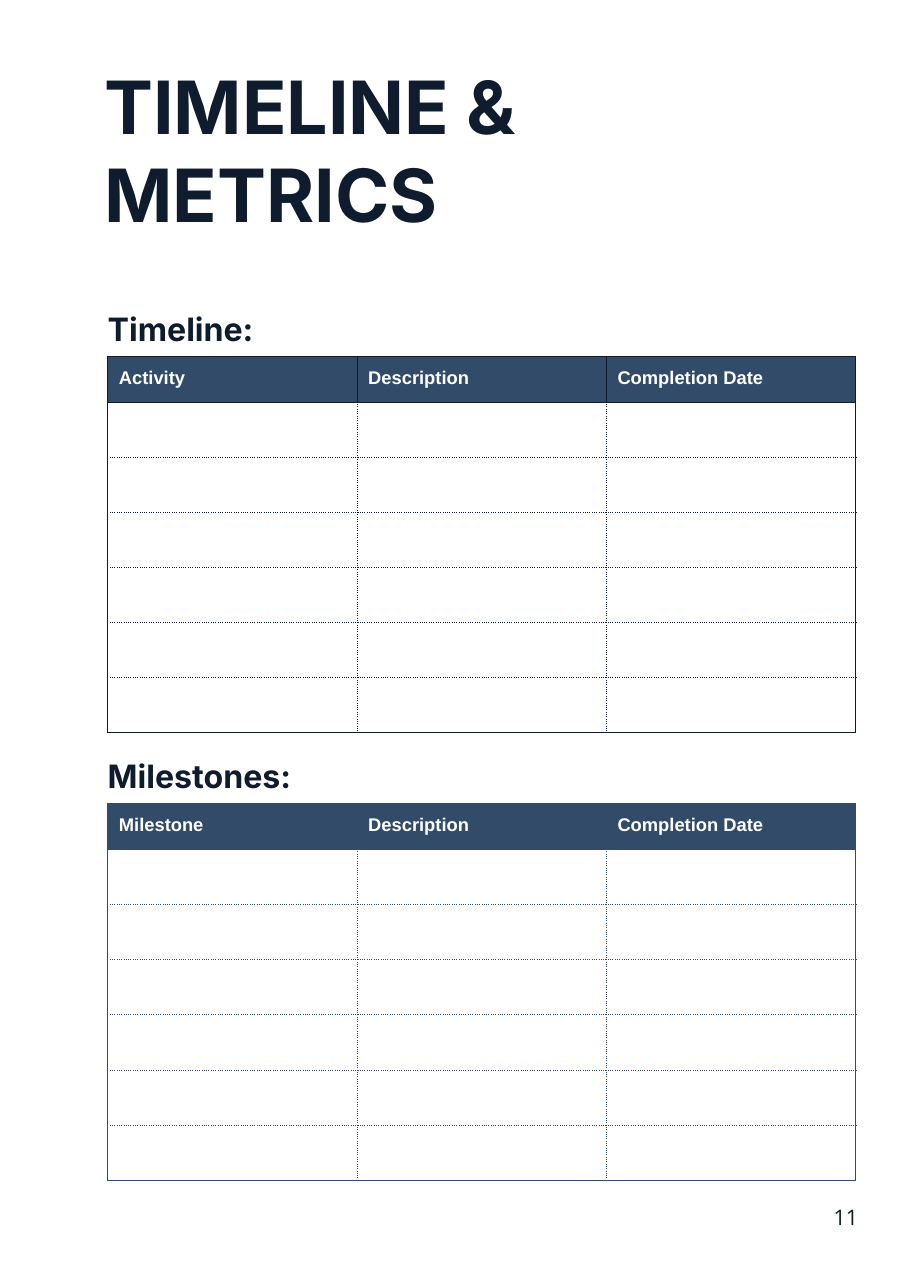
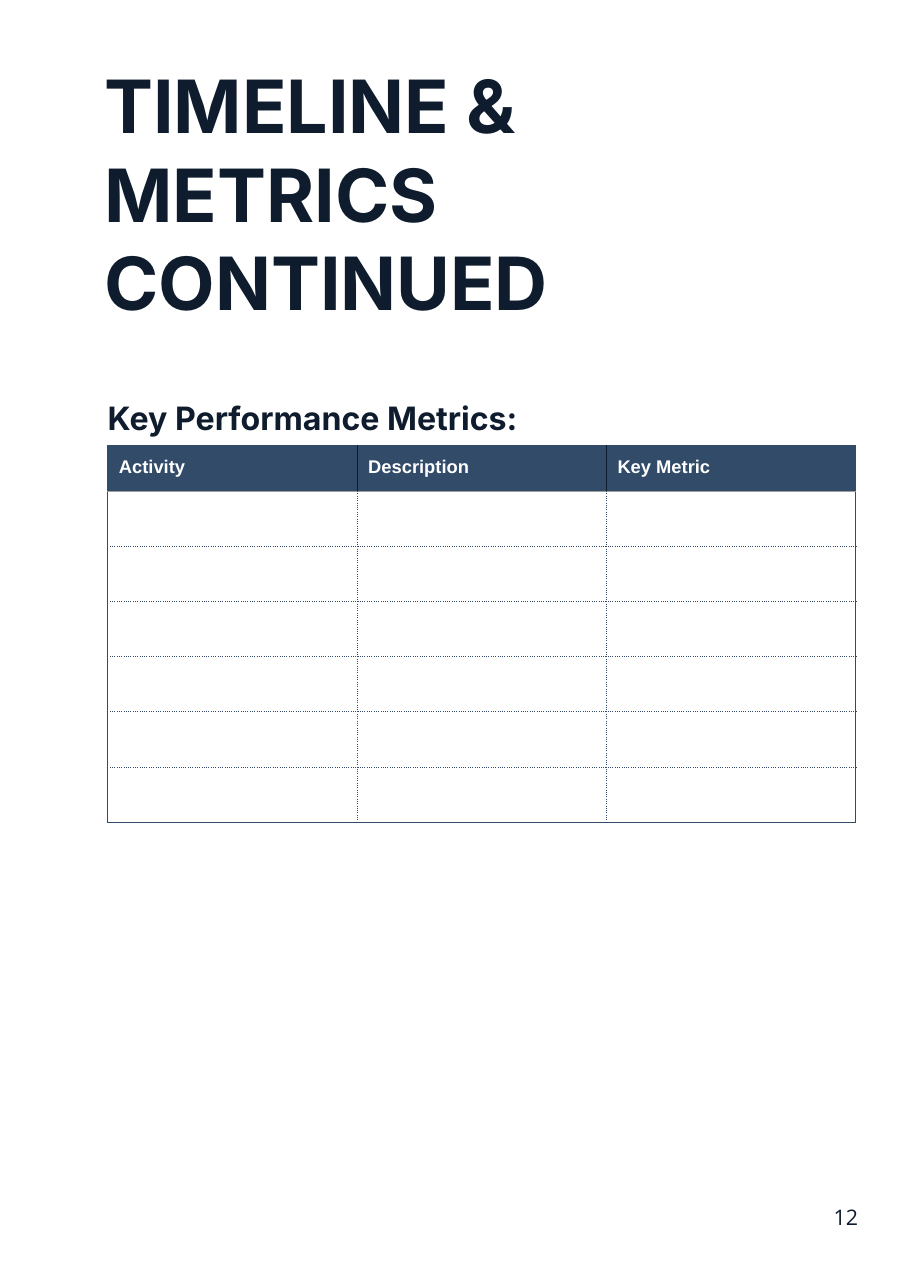
from lxml.etree import SubElement
from pptx import Presentation
from pptx.dml.color import RGBColor
from pptx.enum.text import MSO_AUTO_SIZE, PP_ALIGN
from pptx.oxml.ns import qn
from pptx.util import Inches, Pt

INK = RGBColor(0x0E, 0x1C, 0x2D)
NAVY = RGBColor(0x31, 0x4B, 0x68)
GREY = RGBColor(0x9E, 0x9E, 0x9E)
WHITE = RGBColor(0xFF, 0xFF, 0xFF)


def grid(units):
    return Inches(units / 10)


class Workbook:
    title_top, title_line = 4.5, 8.1
    table_left, column_width = 9.8, 22.63
    header_height, row_height, body_rows = 4.17, 5, 6
    section_pitch, table_drop = 40.6, 6.35

    def __init__(self):
        self.deck = Presentation()
        self.deck.slide_width = grid(82.7)
        self.deck.slide_height = grid(116.9)
        self.slide = None

    def page(self, title, title_lines, number):
        self.slide = self.deck.slides.add_slide(self.deck.slide_layouts[6])
        title_height = 2 + self.title_line * title_lines
        self.text(str(number), (63.6, 107.1, 15.3, 4.4), "Open Sans", 14,
                  spacing=1.5, align=PP_ALIGN.RIGHT)
        self.text(title, (8.5, self.title_top, 69.3, title_height),
                  "Inter", 48, bold=True)
        self.section_top = self.title_top + title_height + 3.3

    def style(self, paragraph, font, size, color, bold):
        paragraph.font.name = font
        paragraph.font.size = Pt(size)
        paragraph.font.color.rgb = color
        paragraph.font.bold = bold

    def text(self, words, box, font, size, bold=False, spacing=None,
             align=PP_ALIGN.LEFT, right_inset=1):
        frame = self.slide.shapes.add_textbox(*map(grid, box)).text_frame
        frame.word_wrap = True
        frame.auto_size = MSO_AUTO_SIZE.SHAPE_TO_FIT_TEXT
        frame.margin_left = frame.margin_top = frame.margin_bottom = grid(1)
        frame.margin_right = grid(right_inset)
        paragraph = frame.paragraphs[0]
        paragraph.text = words
        paragraph.alignment = align
        if spacing:
            paragraph.line_spacing = spacing
        self.style(paragraph, font, size, INK, bold)

    def section(self, heading, labels, frame=NAVY, divider=NAVY, base=NAVY):
        self.text(heading, (8.8, self.section_top, 65.4, 5.6), "Inter", 21,
                  bold=True, spacing=1.3, right_inset=0)
        self.table(labels, self.section_top + self.table_drop,
                   frame, divider, base)
        self.section_top += self.section_pitch

    def table(self, labels, top, frame, divider, base):
        last_row, last_column = self.body_rows, len(labels) - 1
        height = self.header_height + self.row_height * self.body_rows
        table = self.slide.shapes.add_table(
            last_row + 1, len(labels), grid(self.table_left), grid(top),
            grid(self.column_width * len(labels)), grid(height)).table
        table.first_row = table.horz_banding = False
        for column in table.columns:
            column.width = grid(self.column_width)
        for r, row in enumerate(table.rows):
            header = r == 0
            row.height = grid(self.row_height if r else self.header_height)
            for c, cell in enumerate(row.cells):
                if header:
                    self.header_cell(cell, labels[c])
                else:
                    cell.fill.background()
                inner = divider if header else frame
                self.borders(cell, {
                    "L": (inner if c else frame, header or c == 0),
                    "R": (inner if c < last_column else frame,
                          header or c == last_column),
                    "T": (base if r == 1 else frame, r <= 1),
                    "B": (base if header else frame, r in (0, last_row)),
                })

    def header_cell(self, cell, label):
        cell.fill.solid()
        cell.fill.fore_color.rgb = NAVY
        cell.margin_left = cell.margin_right = grid(1)
        cell.margin_top = cell.margin_bottom = grid(1)
        cell.text = label
        self.style(cell.text_frame.paragraphs[0], "Arial", 12, WHITE, True)

    def borders(self, cell, edges):
        properties = cell._tc.get_or_add_tcPr()
        for position, (side, (color, solid)) in enumerate(edges.items()):
            line = SubElement(properties, qn(f"a:ln{side}"), w=str(Pt(0.75)))
            properties.insert(position, line)
            fill = SubElement(line, qn("a:solidFill"))
            SubElement(fill, qn("a:srgbClr"), val=str(color))
            SubElement(line, qn("a:prstDash"), val="solid" if solid else "dot")


def main():
    book = Workbook()
    book.page("TIMELINE & METRICS", 2, 11)
    book.section("Timeline:", ("Activity", "Description", "Completion Date"),
                 frame=INK, divider=INK, base=INK)
    book.section("Milestones:", ("Milestone", "Description", "Completion Date"))
    book.page("TIMELINE & METRICS CONTINUED", 3, 12)
    book.section("Key Performance Metrics:",
                 ("Activity", "Description", "Key Metric"),
                 divider=INK, base=GREY)
    book.deck.save("out.pptx")


if __name__ == "__main__":
    main()
